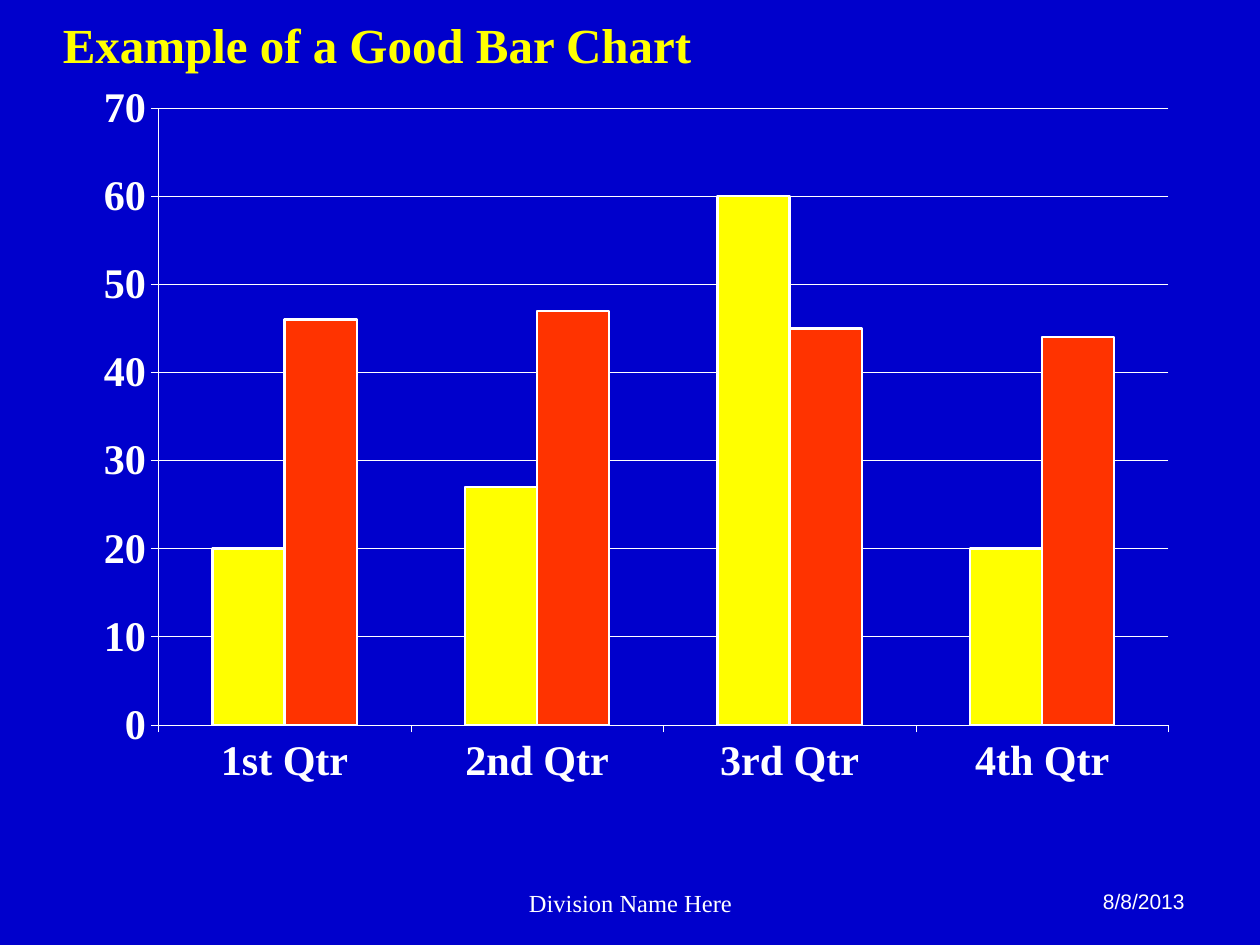
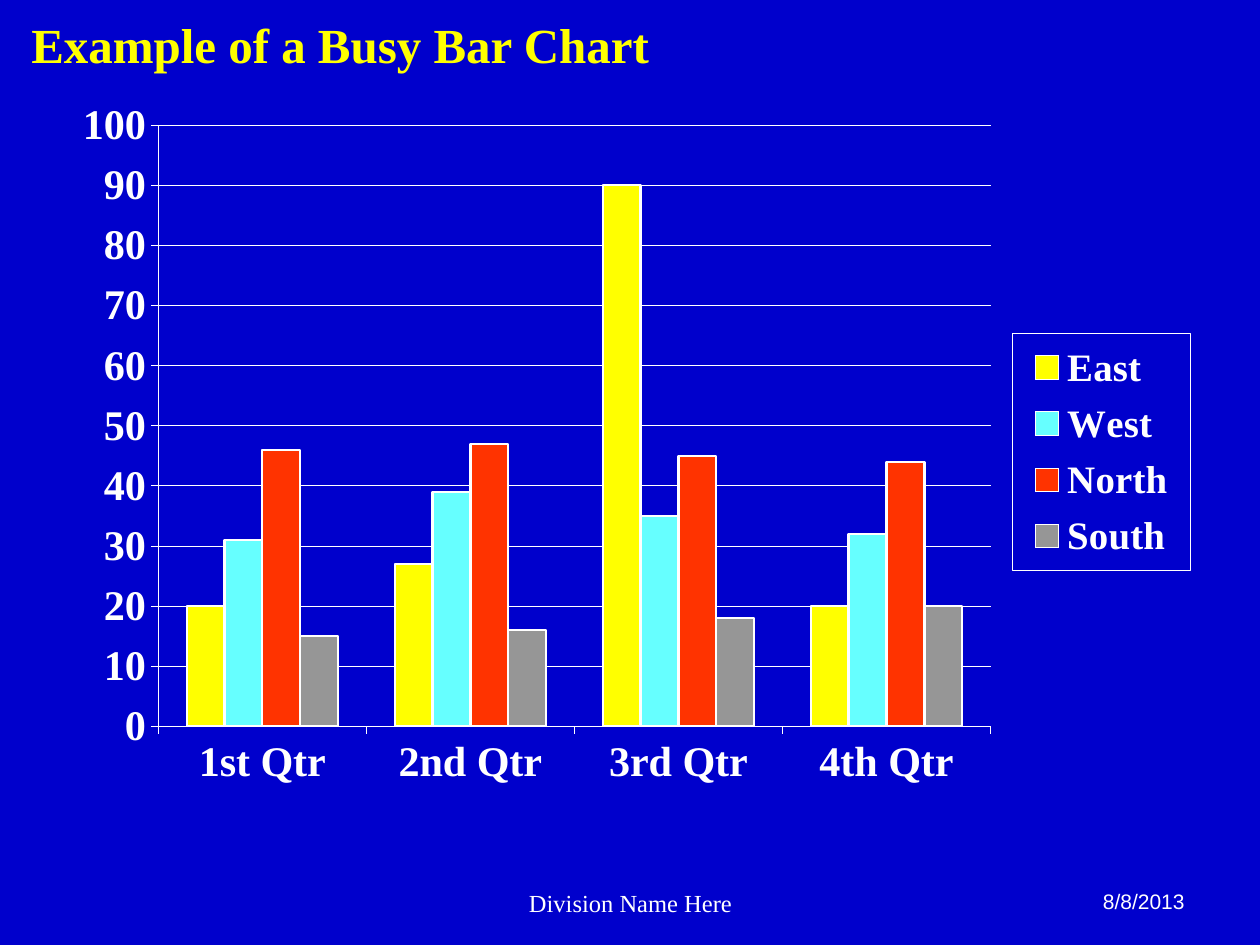
from dataclasses import dataclass
from typing import Any

from lxml import etree
from pptx import Presentation
from pptx import util as u
from pptx.chart.data import CategoryChartData
from pptx.dml.color import RGBColor
from pptx.enum import chart as ch, text
from pptx.oxml import parse_xml
from pptx.oxml.ns import nsdecls, qn

BLUE, WHITE, YELLOW = "0000CC", "FFFFFF", "FFFF00"
CYAN, RED, GREY = "66FFFF", "FF3300", "969696"
SERIF, SANS = "Times New Roman", "Arial"
THIN, EDGE = 0.34, 1.34
QUARTERS = ("1st Qtr", "2nd Qtr", "3rd Qtr", "4th Qtr")
Box = tuple[float, float, float, float]


@dataclass(frozen=True)
class Label:
    words: str
    box: Box
    size: float
    face: str = SERIF
    color: str = WHITE
    bold: bool = False
    align: Any = text.PP_ALIGN.LEFT
    wrap: bool = True


@dataclass(frozen=True)
class Series:
    name: str
    values: tuple[float, ...]
    color: str


@dataclass(frozen=True)
class Page:
    title: str
    left: float
    box: Box
    plot: Box
    top: int
    series: tuple[Series, ...]
    legend: Box | None = None


# Parts shown on every slide
FOOTERS = (
    Label("8/8/2013", (7.42, 7, 2.08, 0.5), 12, SANS,
          align=text.PP_ALIGN.RIGHT),
    Label("Division Name Here", (3.42, 7, 3.17, 0.5), 14,
          align=text.PP_ALIGN.CENTER),
)

PAGES = (
    Page("Example of a Good Bar Chart", 0.4, (0.64, 0.56, 8.81, 5.97),
         (0.07, 0.05, 0.91, 0.82), 70, (
             Series("Series 1", (20, 27, 60, 20), YELLOW),
             Series("Series 2", (46, 47, 45, 44), RED),
         )),
    Page("Example of a Busy Bar Chart", 0.15, (0.64, 0.64, 8.81, 5.89),
         (0.07, 0.06, 0.75, 0.81), 100, (
             Series("East", (20, 27, 90, 20), YELLOW),
             Series("West", (31, 39, 35, 32), CYAN),
             Series("North", (46, 47, 45, 44), RED),
             Series("South", (15, 16, 18, 20), GREY),
         ), (0.84, 0.34, 0.16, 0.32)),
)


def rgb(color: str) -> RGBColor:
    return RGBColor.from_string(color)


def put(item: Any, values: dict[str, Any]) -> None:
    for key, value in values.items():
        setattr(item, key, value)


def style(font: Any, size: float, face: str = SERIF, color: str = WHITE,
          bold: bool = True) -> None:
    put(font, {"size": u.Pt(size), "name": face, "bold": bold})
    font.color.rgb = rgb(color)


def stroke(line: Any, width: float) -> None:
    line.color.rgb = rgb(WHITE)
    line.width = u.Pt(width)


def write(slide: Any, label: Label) -> None:
    box = slide.shapes.add_textbox(*map(u.Inches, label.box))
    box.text_frame.word_wrap = label.wrap
    para = box.text_frame.paragraphs[0]
    para.alignment = label.align
    run = para.add_run()
    run.text = label.words
    style(run.font, label.size, label.face, label.color, label.bold)


def layout(parent: Any, index: int, box: Box, inner: bool = False) -> None:
    """Place a chart part by fractions of the chart area."""
    for old in parent.findall(qn("c:layout")):
        parent.remove(old)
    node = parse_xml(f"<c:layout {nsdecls('c')}><c:manualLayout/></c:layout>")
    items = [("layoutTarget", "inner")] if inner else []
    items += [("xMode", "edge"), ("yMode", "edge"), *zip("xywh", box)]
    for tag, value in items:
        etree.SubElement(node[0], qn(f"c:{tag}")).set("val", str(value))
    parent.insert(index, node)


def key(chart: Any, box: Box) -> None:
    chart.has_legend = True
    legend = chart.legend
    put(legend, {"position": ch.XL_LEGEND_POSITION.RIGHT,
                 "include_in_layout": False})
    node = chart.element.find(f".//{qn('c:legend')}")
    layout(node, node.index(node.find(qn("c:legendPos"))) + 1, box)
    node.append(parse_xml(
        f"<c:spPr {nsdecls('c', 'a')}><a:noFill/>"
        f'<a:ln w="{u.Pt(THIN)}"><a:solidFill><a:srgbClr val="{WHITE}"/>'
        "</a:solidFill></a:ln></c:spPr>"))
    style(legend.font, 22.2)


def bars(slide: Any, page: Page) -> None:
    data = CategoryChartData()
    data.categories = QUARTERS
    for item in page.series:
        data.add_series(item.name, item.values)
    chart = slide.shapes.add_chart(
        ch.XL_CHART_TYPE.COLUMN_CLUSTERED, *map(u.Inches, page.box), data
    ).chart
    put(chart, {"has_title": False, "has_legend": False})
    style(chart.font, 24.1)

    # Axes and grid
    for axis in (chart.category_axis, chart.value_axis):
        put(axis, {"major_tick_mark": ch.XL_TICK_MARK.OUTSIDE,
                   "minor_tick_mark": ch.XL_TICK_MARK.NONE})
        style(axis.tick_labels.font, 24.1)
        stroke(axis.format.line, THIN)
    chart.category_axis.tick_label_position = ch.XL_TICK_LABEL_POSITION.LOW
    put(chart.value_axis, {"minimum_scale": 0, "maximum_scale": page.top,
                           "major_unit": 10, "has_major_gridlines": True})
    stroke(chart.value_axis.major_gridlines.format.line, THIN)

    # Columns
    plot = chart.plots[0]
    put(plot, {"gap_width": 150, "overlap": 0, "vary_by_categories": False})
    for column, item in zip(plot.series, page.series):
        column.invert_if_negative = False
        column.format.fill.solid()
        column.format.fill.fore_color.rgb = rgb(item.color)
        stroke(column.format.line, EDGE)
    layout(chart.element.find(f".//{qn('c:plotArea')}"), 0, page.plot, True)
    if page.legend:
        key(chart, page.legend)


def main() -> None:
    deck = Presentation()
    put(deck, {"slide_width": u.Inches(10), "slide_height": u.Inches(7.5)})
    for page in PAGES:
        slide = deck.slides.add_slide(deck.slide_layouts[6])
        fill = slide.background.fill
        fill.solid()
        fill.fore_color.rgb = rgb(BLUE)
        for label in FOOTERS:
            write(slide, label)
        bars(slide, page)
        write(slide, Label(page.title, (page.left, 0.07, 5.2, 0.57), 28,
                           color=YELLOW, bold=True, wrap=False))
    deck.save("out.pptx")


if __name__ == "__main__":
    main()
